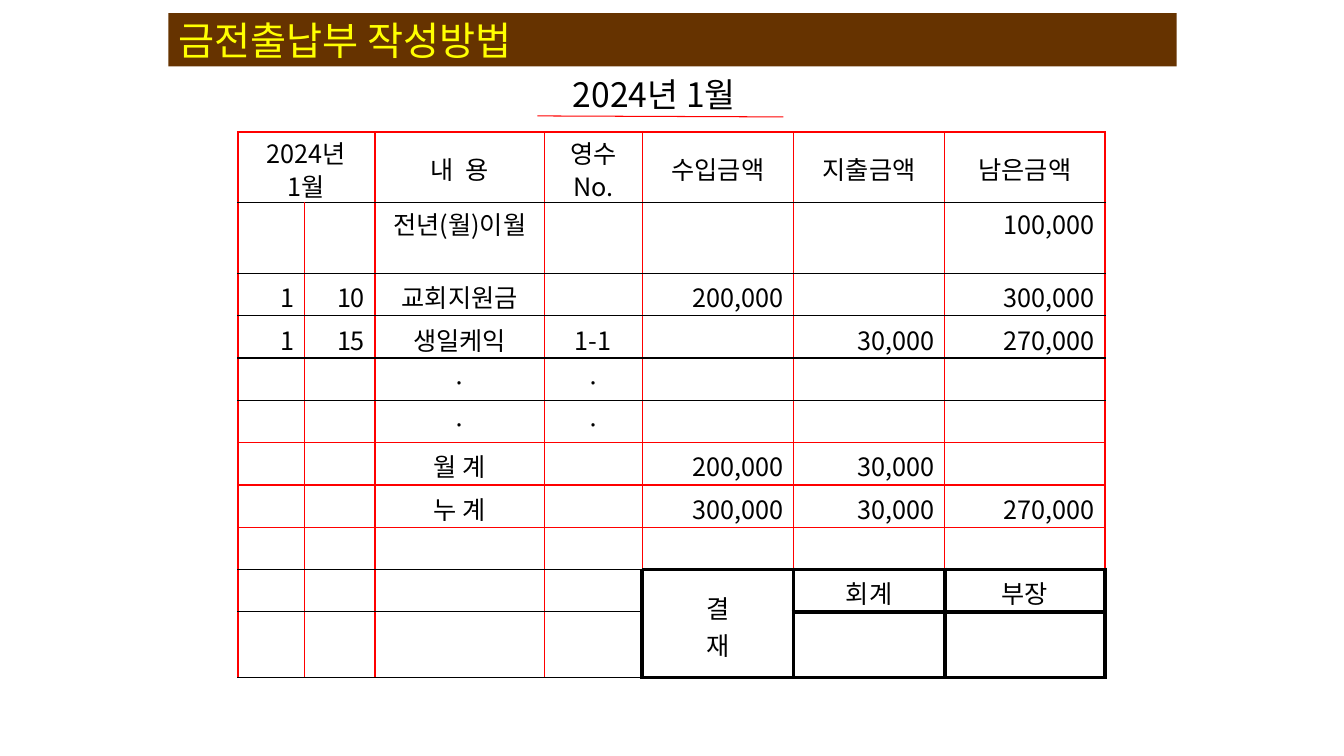
from lxml.etree import SubElement
from pptx import Presentation
from pptx.dml.color import RGBColor
from pptx.enum.shapes import MSO_CONNECTOR
from pptx.enum.text import MSO_ANCHOR, MSO_AUTO_SIZE, PP_ALIGN
from pptx.oxml.ns import qn
from pptx.util import Inches, Pt

TITLE = "금전출납부 작성방법"
MONTH = "2024년 1월"
LEDGER = [
    ["2024년\n1월", "", "내  용", "영수\nNo.", "수입금액", "지출금액", "남은금액"],
    ["", "", "전년(월)이월", "", "", "", "100,000"],
    ["1", "10", "교회지원금", "", "200,000", "", "300,000"],
    ["1", "15", "생일케익", "1-1", "", "30,000", "270,000"],
    ["", "", "·", "·", "", "", ""],
    ["", "", "·", "·", "", "", ""],
    ["", "", "월 계", "", "200,000", "30,000", ""],
    ["", "", "누 계", "", "300,000", "30,000", "270,000"],
    ["", "", "", "", "", "", ""],
    ["", "", "", "", "결\n재", "회계", "부장"],
    ["", "", "", "", "", "", ""],
]
COLUMN_WIDTHS = [0.66, 0.7, 1.68, 0.97, 1.5, 1.5, 1.59]
ROW_HEIGHTS = [0.7, 0.7] + [0.42] * 8 + [0.65]
RED_RULES = {0, 6, 7, 8}  # horizontal rules, counted from the top edge
APPROVAL_ROW, APPROVAL_COLUMN = 9, 4
FONT = "Noto Sans CJK KR"
COLORS = {"bar": "663300", "title": "FFFF00", "text": "000000",
          "red": "FF0000", "black": "000000"}


def color(name):
    return RGBColor.from_string(COLORS[name])


def format_paragraph(paragraph, size, color_name, alignment):
    paragraph.alignment = alignment
    font = paragraph.font
    font.size = Pt(size)
    font.name = FONT
    font.color.rgb = color(color_name)
    properties = paragraph._p.pPr.find(qn("a:defRPr"))
    SubElement(properties, qn("a:ea")).set("typeface", FONT)


def edge_style(row, column, horizontal):
    """Colour and width of the rule that starts at this grid corner."""
    if row >= APPROVAL_ROW and column >= APPROVAL_COLUMN:
        return "black", 3
    if horizontal and row not in RED_RULES:
        return "black", 1
    return "red", 1


def set_borders(cell, row, column):
    edges = {
        "a:lnL": edge_style(row, column, False),
        "a:lnR": edge_style(row, column + 1, False),
        "a:lnT": edge_style(row, column, True),
        "a:lnB": edge_style(row + 1, column, True),
    }
    properties = cell._tc.get_or_add_tcPr()
    for tag, (color_name, width) in edges.items():
        line = SubElement(properties, qn(tag), w=str(Pt(width)))
        fill = SubElement(line, qn("a:solidFill"))
        SubElement(fill, qn("a:srgbClr"), val=COLORS[color_name])


def fill_cell(cell, text, row, column):
    set_borders(cell, row, column)
    cell.fill.background()
    cell.margin_left = cell.margin_right = Inches(0.1)
    cell.margin_top, cell.margin_bottom = Inches(0.05), 0
    in_header = row == 0 and column > 1
    in_approval = (row, column) == (APPROVAL_ROW, APPROVAL_COLUMN)
    cell.vertical_anchor = MSO_ANCHOR.MIDDLE if in_header or in_approval else MSO_ANCHOR.TOP
    centered = row in (0, APPROVAL_ROW) or column in (2, 3)
    cell.text = text
    for paragraph in cell.text_frame.paragraphs:
        format_paragraph(paragraph, 18, "text", PP_ALIGN.CENTER if centered else PP_ALIGN.RIGHT)
        if row < 2:
            paragraph.line_spacing = 0.9


def add_title(slide):
    title = slide.shapes.title
    title.left, title.top = Inches(1.67), Inches(0.13)
    title.width, title.height = Inches(10), Inches(0.53)
    title.fill.solid()
    title.fill.fore_color.rgb = color("bar")
    frame = title.text_frame
    frame.text = TITLE
    frame.auto_size = MSO_AUTO_SIZE.NONE
    frame.vertical_anchor = MSO_ANCHOR.MIDDLE
    format_paragraph(frame.paragraphs[0], 28, "title", PP_ALIGN.LEFT)


def add_ledger(slide):
    frame = slide.shapes.add_table(
        len(LEDGER), len(COLUMN_WIDTHS), Inches(2.36), Inches(1.31),
        Inches(sum(COLUMN_WIDTHS)), Inches(sum(ROW_HEIGHTS)))
    table = frame.table
    table.first_row = table.horz_banding = False
    for column, width in zip(table.columns, COLUMN_WIDTHS):
        column.width = Inches(width)
    for row, height in zip(table.rows, ROW_HEIGHTS):
        row.height = Inches(height)
    for row, texts in enumerate(LEDGER):
        for column, text in enumerate(texts):
            fill_cell(table.cell(row, column), text, row, column)
    table.cell(0, 0).merge(table.cell(0, 1))
    approval = table.cell(APPROVAL_ROW, APPROVAL_COLUMN)
    approval.merge(table.cell(APPROVAL_ROW + 1, APPROVAL_COLUMN))


def add_month(slide):
    box = slide.shapes.add_textbox(Inches(3.91), Inches(0.68), Inches(5.16), Inches(0.5))
    box.text_frame.word_wrap = True
    box.text_frame.text = MONTH
    format_paragraph(box.text_frame.paragraphs[0], 24, "text", PP_ALIGN.CENTER)
    underline = slide.shapes.add_connector(
        MSO_CONNECTOR.STRAIGHT, Inches(5.33), Inches(1.15), Inches(7.77), Inches(1.16))
    underline.line.color.rgb = color("red")
    underline.line.width = Pt(0.75)
    SubElement(underline._element.spPr, qn("a:effectLst"))


def main():
    presentation = Presentation()
    presentation.slide_width, presentation.slide_height = Inches(13.33), Inches(7.5)
    slide = presentation.slides.add_slide(presentation.slide_layouts[5])
    add_title(slide)
    add_ledger(slide)
    add_month(slide)
    presentation.save("out.pptx")


if __name__ == "__main__":
    main()
